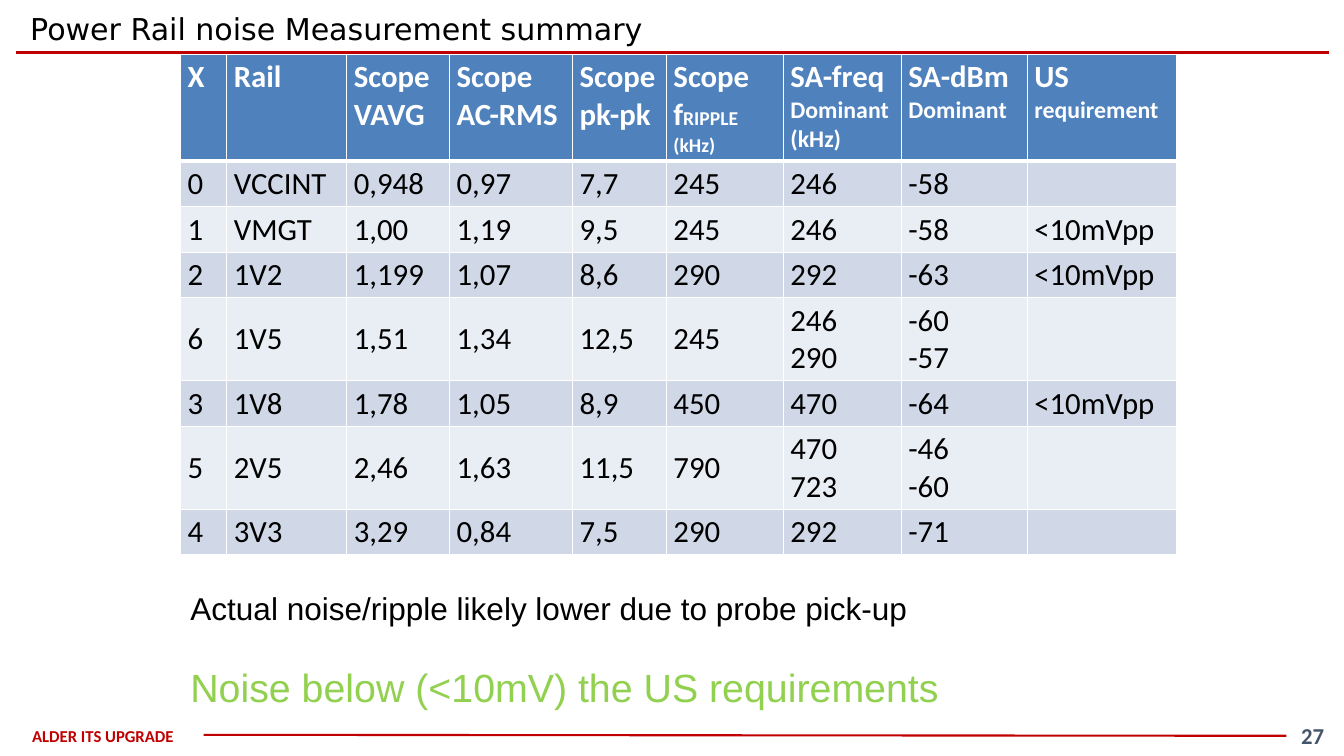
from dataclasses import dataclass

from lxml import etree
from pptx import Presentation
from pptx.dml.color import RGBColor
from pptx.enum.shapes import MSO_CONNECTOR
from pptx.enum.text import MSO_ANCHOR, MSO_AUTO_SIZE, PP_ALIGN
from pptx.oxml.ns import qn
from pptx.util import Inches, Pt

LEFT, CENTER = PP_ALIGN.LEFT, PP_ALIGN.CENTER
TOP, MIDDLE = MSO_ANCHOR.TOP, MSO_ANCHOR.MIDDLE
STRAIGHT = MSO_CONNECTOR.STRAIGHT
FIXED = MSO_AUTO_SIZE.NONE

# Grid: 100 columns by 100 rows over the whole slide
WIDTH, HEIGHT = Inches(13.33), Inches(7.5)

COLORS = {
    "red": "C00000", "slate": "44546A", "black": "000000", "green": "92D050",
    "white": "FFFFFF", "head": "4F81BD", "odd": "D0D8E8", "even": "E9EDF4",
}


@dataclass
class Run:
    text: str
    size: float
    color: str = "black"


@dataclass
class Rule:
    x1: float
    y1: float
    x2: float
    y2: float
    weight: float


@dataclass
class Label:
    box: tuple
    lines: list
    font: str
    style: dict


RULES = [
    Rule(1.2, 6.93, 98.87, 6.93, 2.25),
    Rule(95.72, 97.33, 15.15, 97.2, 1.5),
]

LABELS = [
    Label((0.15, 96.27, 15, 2.13), [[Run("ALDER ITS UPGRADE", 11.9, "red")]], "Calibri",
          dict(bold=True, align=CENTER, anchor=MIDDLE, inset=(0, 0))),
    Label((95.72, 95.2, 3.9, 4.13), [[Run("27", 16.2, "slate")]], "Calibri",
          dict(bold=True, align=CENTER, anchor=MIDDLE, inset=(0.04, 0.04), wrap=False)),
    Label((13.43, 77.2, 70.67, 17.73),
          [[Run("Actual noise/ripple likely lower due to probe pick-up", 22.5)],
           [Run("Noise below (<10mV) the US requirements", 28.1, "green")]],
          "Arial", dict(gap=26)),
]

# Table: each header cell lists its lines, each line its (text, size) runs
COLS = [3.45, 8.93, 7.65, 9.15, 6.98, 8.7, 8.78, 9.38, 11.1]
BIG, MID, SMALL = 22, 17, 14
HEADS = [
    [[("X", BIG)]],
    [[("Rail", BIG)]],
    [[("Scope", BIG)], [("VAVG", BIG)]],
    [[("Scope", BIG)], [("AC-RMS", BIG)]],
    [[("Scope", BIG)], [("pk-pk", BIG)]],
    [[("Scope", BIG)], [("f", BIG), ("RIPPLE", SMALL)], [("(kHz)", SMALL)]],
    [[("SA-freq", BIG)], [("Dominant", MID)], [("(kHz)", MID)]],
    [[("SA-dBm", BIG)], [("Dominant", MID)]],
    [[("US", BIG)], [("requirement", MID)]],
]
LIMIT = "<10mVpp"
RAILS = [
    ("0", "VCCINT", "0,948", "0,97", "7,7", "245", "246", "-58", ""),
    ("1", "VMGT", "1,00", "1,19", "9,5", "245", "246", "-58", LIMIT),
    ("2", "1V2", "1,199", "1,07", "8,6", "290", "292", "-63", LIMIT),
    ("6", "1V5", "1,51", "1,34", "12,5", "245", "246\n290", "-60\n-57", ""),
    ("3", "1V8", "1,78", "1,05", "8,9", "450", "470", "-64", LIMIT),
    ("5", "2V5", "2,46", "1,63", "11,5", "790", "470\n723", "-46\n-60", ""),
    ("4", "3V3", "3,29", "0,84", "7,5", "290", "292", "-71", ""),
]
HEAD_ROW, ONE_LINE, TWO_LINES = 14, 6, 10.93


def col(n: float) -> int:
    return round(WIDTH * n / 100)


def row(n: float) -> int:
    return round(HEIGHT * n / 100)


def place(box: tuple) -> tuple:
    x, y, w, h = box
    return col(x), row(y), col(w), row(h)


def paint(name: str) -> RGBColor:
    return RGBColor.from_string(COLORS[name])


def write(frame, lines: list, *, font: str, bold: bool = False, align=LEFT, gap: float = 0) -> None:
    """Fill a text frame, one paragraph per line of runs."""
    for i, line in enumerate(lines):
        para = frame.paragraphs[0] if i == 0 else frame.add_paragraph()
        para.alignment = align
        para.space_before = Pt(gap if i else 0)
        for item in line:
            run = para.add_run()
            run.text = item.text
            run.font.name, run.font.size, run.font.bold = font, Pt(item.size), bold
            run.font.color.rgb = paint(item.color)


def pad(part, inset: tuple) -> None:
    part.margin_left = part.margin_right = Inches(inset[0])
    part.margin_top = part.margin_bottom = Inches(inset[1])


def draw_rule(slide, rule: Rule) -> None:
    line = slide.shapes.add_connector(
        STRAIGHT, col(rule.x1), row(rule.y1), col(rule.x2), row(rule.y2))
    line.line.color.rgb = paint("red")
    line.line.width = Pt(rule.weight)
    etree.SubElement(line._element.spPr, qn("a:effectLst"))


def draw_label(slide, label: Label) -> None:
    style = dict(label.style)
    frame = slide.shapes.add_textbox(*place(label.box)).text_frame
    frame.word_wrap = style.pop("wrap", True)
    frame.vertical_anchor = style.pop("anchor", TOP)
    pad(frame, style.pop("inset", (0.1, 0.05)))
    write(frame, label.lines, font=label.font, **style)


def draw_title(slide) -> None:
    title = slide.shapes.title
    title.left, title.top, title.width, title.height = place((1.2, 0.67, 97.67, 6.27))
    frame = title.text_frame
    frame.auto_size, frame.word_wrap, frame.vertical_anchor = FIXED, True, MIDDLE
    pad(frame, (0.14, 0.07))
    write(frame, [[Run("Power Rail noise Measurement summary", 21.5)]], font="DejaVu Sans")


def edge(cell, top: float, base: float) -> None:
    """Give a cell white borders; top and base are widths in points."""
    props = cell._tc.get_or_add_tcPr()
    for side, width in (("L", 1), ("R", 1), ("T", top), ("B", base)):
        line = etree.SubElement(props, qn(f"a:ln{side}"), w=str(Pt(width)))
        fill = etree.SubElement(line, qn("a:solidFill"))
        etree.SubElement(fill, qn("a:srgbClr"), val=COLORS["white"])


def draw_table(slide) -> None:
    heads = [[[Run(text, size, "white") for text, size in line] for line in head]
             for head in HEADS]
    body = [[[[Run(text, BIG)] for text in value.split("\n")] for value in rail]
            for rail in RAILS]
    highs = [HEAD_ROW] + [TWO_LINES if any("\n" in v for v in rail) else ONE_LINE
                          for rail in RAILS]
    box = place((13.43, 7.2, sum(COLS), sum(highs)))
    table = slide.shapes.add_table(len(highs), len(COLS), *box).table
    for part, width in zip(table.columns, COLS):
        part.width = col(width)
    for r, (high, cells) in enumerate(zip(highs, [heads] + body)):
        table.rows[r].height = row(high)
        shade = "head" if r == 0 else "odd" if r % 2 else "even"
        for c, lines in enumerate(cells):
            cell = table.cell(r, c)
            edge(cell, 3 if r == 1 else 1, 3 if r == 0 else 1)
            cell.fill.solid()
            cell.fill.fore_color.rgb = paint(shade)
            cell.vertical_anchor = MIDDLE if r else TOP
            pad(cell, (0.07, 0.04))
            write(cell.text_frame, lines, font="Calibri", bold=r == 0)


def main() -> None:
    deck = Presentation()
    deck.slide_width, deck.slide_height = WIDTH, HEIGHT
    slide = deck.slides.add_slide(deck.slide_layouts[5])
    for rule in RULES:
        draw_rule(slide, rule)
    draw_title(slide)
    draw_table(slide)
    for label in LABELS:
        draw_label(slide, label)
    deck.save("out.pptx")


if __name__ == "__main__":
    main()
